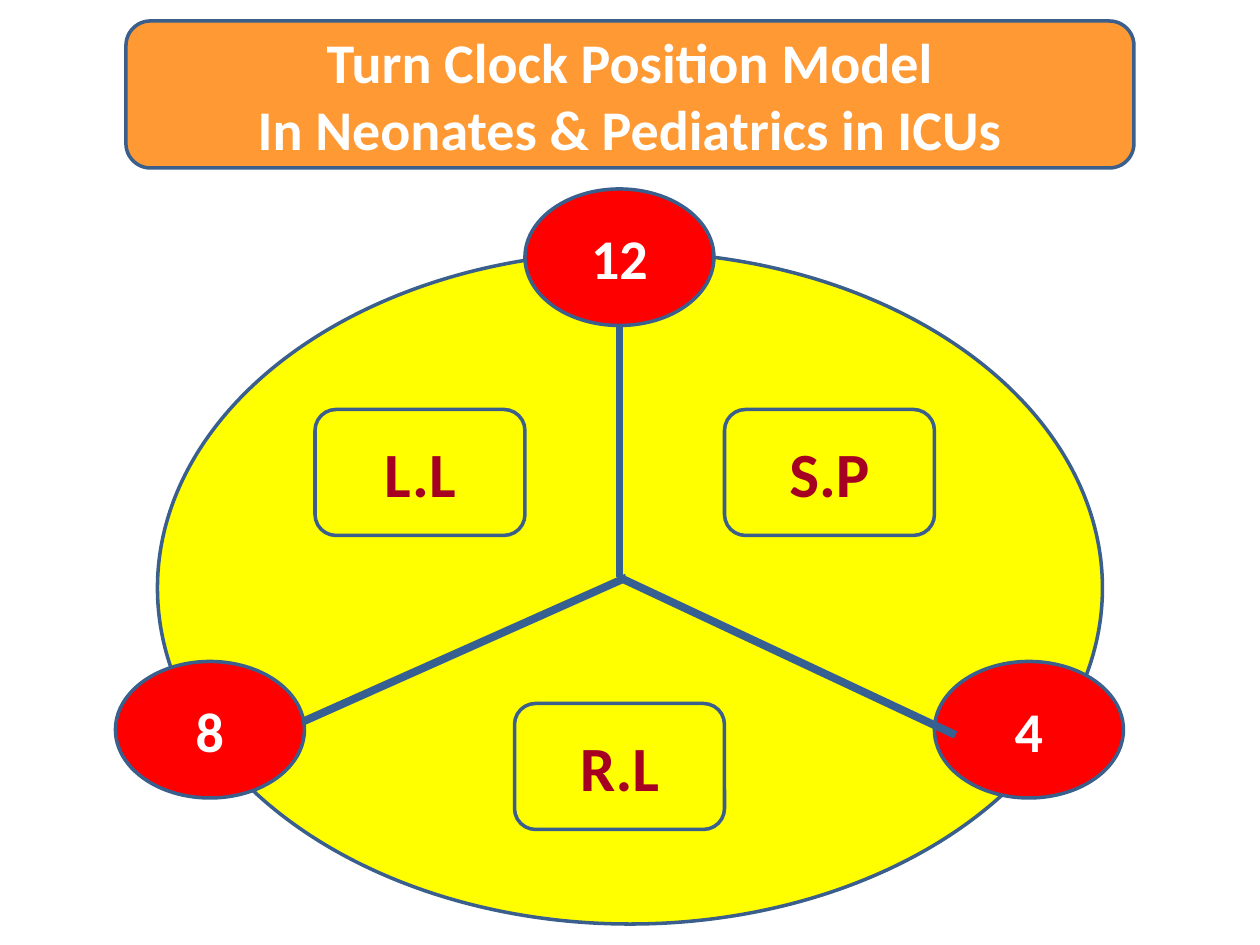
from lxml.etree import SubElement
from pptx import Presentation
from pptx.dml.color import RGBColor
from pptx.enum.shapes import MSO_CONNECTOR, MSO_SHAPE
from pptx.enum.text import MSO_ANCHOR, PP_ALIGN
from pptx.oxml.ns import qn
from pptx.util import Pt

FONT = "Calibri"
OUTLINE, HAND = "3A5F8C", "376092"
YELLOW, RED, ORANGE = "FFFF00", "FF0000", "FF9933"
WHITE, DARK_RED = "FFFFFF", "A50021"


def color(hex_value):
    return RGBColor.from_string(hex_value)


def add_panel(slide, kind, left, top, width, height, fill):
    panel = slide.shapes.add_shape(kind, Pt(left), Pt(top), Pt(width), Pt(height))
    panel.shadow.inherit = False
    panel.fill.solid()
    panel.fill.fore_color.rgb = color(fill)
    panel.line.color.rgb = color(OUTLINE)
    panel.line.width = Pt(2)
    return panel


def write_label(panel, text, size, text_color):
    frame = panel.text_frame
    frame.word_wrap = True
    frame.vertical_anchor = MSO_ANCHOR.MIDDLE
    frame.text = text
    for paragraph in frame.paragraphs:
        paragraph.alignment = PP_ALIGN.CENTER
        for run in paragraph.runs:
            run.font.name = FONT
            run.font.size = Pt(size)
            run.font.bold = True
            run.font.color.rgb = color(text_color)


def add_hour(slide, hour, left, top):
    badge = add_panel(slide, MSO_SHAPE.OVAL, left, top, 108, 78, RED)
    write_label(badge, hour, 32, WHITE)


def add_position(slide, position, left, top):
    box = add_panel(slide, MSO_SHAPE.ROUNDED_RECTANGLE, left, top, 120, 72, YELLOW)
    write_label(box, position, 36, DARK_RED)


def add_hand(slide, x1, y1, x2, y2):
    hand = slide.shapes.add_connector(
        MSO_CONNECTOR.STRAIGHT, Pt(x1), Pt(y1), Pt(x2), Pt(y2))
    hand.line.color.rgb = color(HAND)
    hand.line.width = Pt(4.5)
    SubElement(hand._element.spPr, qn("a:effectLst"))


def main():
    prs = Presentation()
    prs.slide_width, prs.slide_height = Pt(720), Pt(540)
    slide = prs.slides.add_slide(prs.slide_layouts[6])

    # Clock face; the hand to 4 lies over its badge
    add_panel(slide, MSO_SHAPE.OVAL, 90, 144, 540, 384, YELLOW)
    add_hour(slide, "4", 534, 378)

    # Hands dividing the face into three
    add_hand(slide, 354, 174, 354, 330)
    add_hand(slide, 358, 330, 156, 420)
    add_hand(slide, 354, 330, 546, 420)

    # Patient positions
    add_position(slide, "S.P", 414, 234)
    add_position(slide, "R.L", 294, 402)
    add_position(slide, "L.L", 180, 234)

    # Title
    title = add_panel(slide, MSO_SHAPE.ROUNDED_RECTANGLE, 72, 12, 576, 84, ORANGE)
    write_label(title, "Turn Clock Position Model\nIn Neonates & Pediatrics in ICUs",
                32, WHITE)

    # Remaining hours, over the hand ends
    add_hour(slide, "8", 66, 378)
    add_hour(slide, "12", 300, 108)

    prs.save("out.pptx")


if __name__ == "__main__":
    main()
